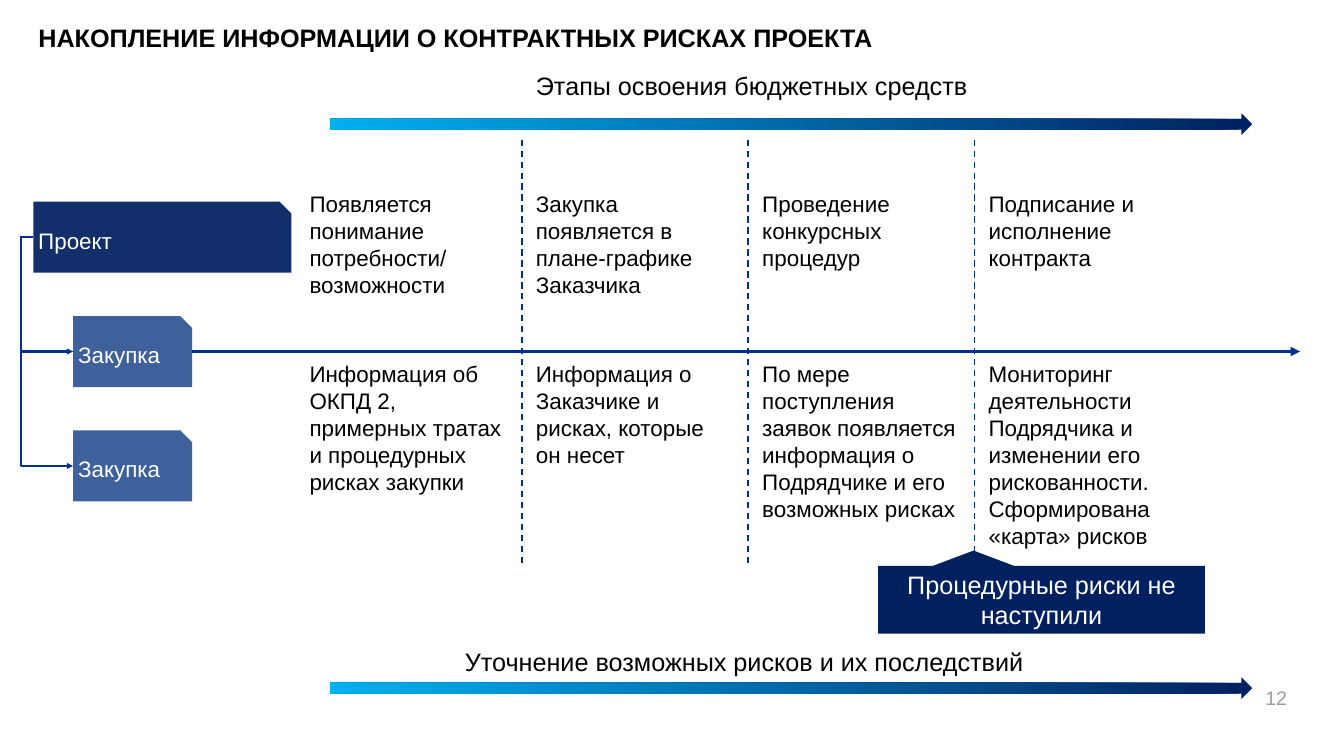
from lxml import etree
from pptx import Presentation
from pptx.dml.color import RGBColor
from pptx.enum.dml import MSO_LINE
from pptx.enum.shapes import MSO_CONNECTOR, MSO_SHAPE
from pptx.enum.text import MSO_ANCHOR, MSO_AUTO_SIZE, PP_ALIGN
from pptx.oxml.ns import qn
from pptx.util import Inches, Pt

STRAIGHT, ELBOW = MSO_CONNECTOR.STRAIGHT, MSO_CONNECTOR.ELBOW
SNIP, ARROW = MSO_SHAPE.SNIP_1_RECTANGLE, MSO_SHAPE.RIGHT_ARROW
CALLOUT = MSO_SHAPE.RECTANGULAR_CALLOUT
LEFT, CENTER, RIGHT = PP_ALIGN.LEFT, PP_ALIGN.CENTER, PP_ALIGN.RIGHT
TOP, MIDDLE = MSO_ANCHOR.TOP, MSO_ANCHOR.MIDDLE
NO_AUTOFIT = MSO_AUTO_SIZE.NONE
DASH = MSO_LINE.DASH
LEFT_SIDE, RIGHT_SIDE = 1, 3

NAVY, STEEL, SKY, LINE = "002060", "305494", "00B0F0", "003192"
BLACK, WHITE, GREY = "000000", "FFFFFF", "9D9D9C"
DEFAULT_INSETS = (0.1, 0.05, 0.1, 0.05)
LABEL_INSETS = (0, 0.16, 0.1, 0)

COLUMN_LEFT, DIVIDER_LEFT, PITCH = 6.14, 10.35, 4.49
STAGES = [
    (["Появляется понимание потребности/", "возможности"],
     ["Информация об ОКПД 2, примерных тратах и процедурных рисках закупки"]),
    (["Закупка появляется в плане-графике Заказчика"],
     ["Информация о Заказчике и рисках, которые он несет"]),
    (["Проведение конкурсных процедур"],
     ["По мере поступления заявок появляется информация о Подрядчике "
      "и его возможных рисках"]),
    (["Подписание и исполнение контракта"],
     ["Мониторинг деятельности Подрядчика и изменении его рискованности.",
      "Сформирована «карта» рисков"]),
]


def rgb(color):
    return RGBColor.from_string(color)


class SlideBuilder:
    def __init__(self, s, font="Arial"):
        self.s, self.font = s, font

    def fill_text(self, sp, paragraphs, size, color=BLACK, bold=False, align=LEFT,
                  anchor=TOP, insets=DEFAULT_INSETS):
        tf = sp.text_frame
        tf.word_wrap = True
        tf.auto_size = NO_AUTOFIT
        tf.vertical_anchor = anchor
        (tf.margin_left, tf.margin_top,
         tf.margin_right, tf.margin_bottom) = map(Inches, insets)
        for i, text in enumerate(paragraphs):
            p = tf.add_paragraph() if i else tf.paragraphs[0]
            p.alignment = align
            r = p.add_run()
            r.text = text
            r.font.name, r.font.size, r.font.bold = self.font, Pt(size), bold
            r.font.color.rgb = rgb(color)

    def title(self, box, text):
        sp = self.s.shapes.title
        sp.left, sp.top, sp.width, sp.height = map(Inches, box)
        self.fill_text(sp, [text], 36, bold=True)

    def text(self, box, paragraphs, size, **style):
        sp = self.s.shapes.add_textbox(*map(Inches, box))
        self.fill_text(sp, paragraphs, size, **style)

    def shape(self, kind, box):
        sp = self.s.shapes.add_shape(kind, *map(Inches, box))
        sp.shadow.inherit = False
        sp.line.fill.background()
        return sp

    def card(self, box, text, color):
        """Add a translucent box with one snipped corner."""
        sp = self.shape(SNIP, box)
        sp.fill.solid()
        sp.fill.fore_color.rgb = rgb(color)
        clr = sp._element.spPr.find(f".//{qn('a:srgbClr')}")
        etree.SubElement(clr, qn("a:alpha"), val="93000")
        self.fill_text(sp, [text], 32, color=WHITE, anchor=MIDDLE)
        return sp

    def gradient_arrow(self, top):
        sp = self.shape(ARROW, (6.54, top, 18.3, 0.43))
        sp.fill.gradient()
        sp.fill.gradient_angle = 180
        for stop, color in zip(sp.fill.gradient_stops, (NAVY, SKY)):
            stop.color.rgb = rgb(color)

    def callout(self, box, text, tip):
        sp = self.shape(CALLOUT, box)
        sp.adjustments[0], sp.adjustments[1] = tip
        sp.fill.solid()
        sp.fill.fore_color.rgb = rgb(NAVY)
        self.fill_text(sp, [text], 36, color=WHITE, align=CENTER, anchor=MIDDLE)

    def line(self, ends, width, kind=STRAIGHT, dash=None, arrow=False):
        cx = self.s.shapes.add_connector(kind, *map(Inches, ends))
        cx.line.color.rgb = rgb(LINE)
        cx.line.width = Pt(width)
        if dash:
            cx.line.dash_style = dash
        spPr = cx._element.spPr
        if arrow:
            etree.SubElement(spPr.find(qn("a:ln")), qn("a:tailEnd"), type="triangle")
        etree.SubElement(spPr, qn("a:effectLst"))
        return cx

    def branch(self, parent, child, ends):
        """Join the left sides of two cards with an elbow that runs outside them."""
        cx = self.line(ends, 3, kind=ELBOW, arrow=True)
        cx.begin_connect(parent, LEFT_SIDE)
        cx.end_connect(child, LEFT_SIDE)
        geom = cx._element.spPr.find(qn("a:prstGeom"))
        guides = geom.find(qn("a:avLst"))
        if guides is None:
            guides = etree.SubElement(geom, qn("a:avLst"))
        etree.SubElement(guides, qn("a:gd"), name="adj1", fmla="val -31600")


def main():
    prs = Presentation()
    prs.slide_width, prs.slide_height = Inches(26.66), Inches(15)
    b = SlideBuilder(prs.slides.add_slide(prs.slide_layouts[5]))

    b.title((0.66, 0.4, 18.21, 0.71),
            "НАКОПЛЕНИЕ ИНФОРМАЦИИ О КОНТРАКТНЫХ РИСКАХ ПРОЕКТА")
    b.text((24.2, 13.56, 1.43, 0.8), ["12"], 28, color=GREY, align=RIGHT)

    project = b.card((0.66, 4, 5.12, 1.41), "Проект", NAVY)
    purchases = [b.card((1.45, top, 2.36, 1.41), "Закупка", STEEL)
                 for top in (6.27, 8.54)]
    for purchase, y in zip(purchases, (6.98, 9.25)):
        b.branch(project, purchase, (0.66, 4.71, 1.45, y))

    for i, (stage, information) in enumerate(STAGES):
        x = COLUMN_LEFT + i * PITCH
        b.text((x, 3.62, 4.03, 2.31), stage, 32, insets=LABEL_INSETS)
        b.text((x, 6.99, 4.03, 3.93), information, 32, insets=LABEL_INSETS)
    for i in range(len(STAGES) - 1):
        x = DIVIDER_LEFT + i * PITCH
        b.line((x, 2.77, x, 11.23), 2.25, dash=DASH)

    timeline = b.line((3.81, 6.98, 25.79, 6.98), 4.5, arrow=True)
    timeline.begin_connect(purchases[0], RIGHT_SIDE)
    timeline.end_y = timeline.begin_y

    b.text((10.63, 1.23, 8.99, 0.76), ["Этапы освоения бюджетных средств"], 36,
           insets=LABEL_INSETS)
    b.text((9.22, 12.67, 13.39, 0.76),
           ["Уточнение возможных рисков и их последствий"], 36, insets=LABEL_INSETS)
    for top in (2.25, 13.44):
        b.gradient_arrow(top)
    b.callout((17.42, 11.23, 6.48, 1.34), "Процедурные риски не наступили",
              (-0.208, -0.728))

    prs.save("out.pptx")


if __name__ == "__main__":
    main()
